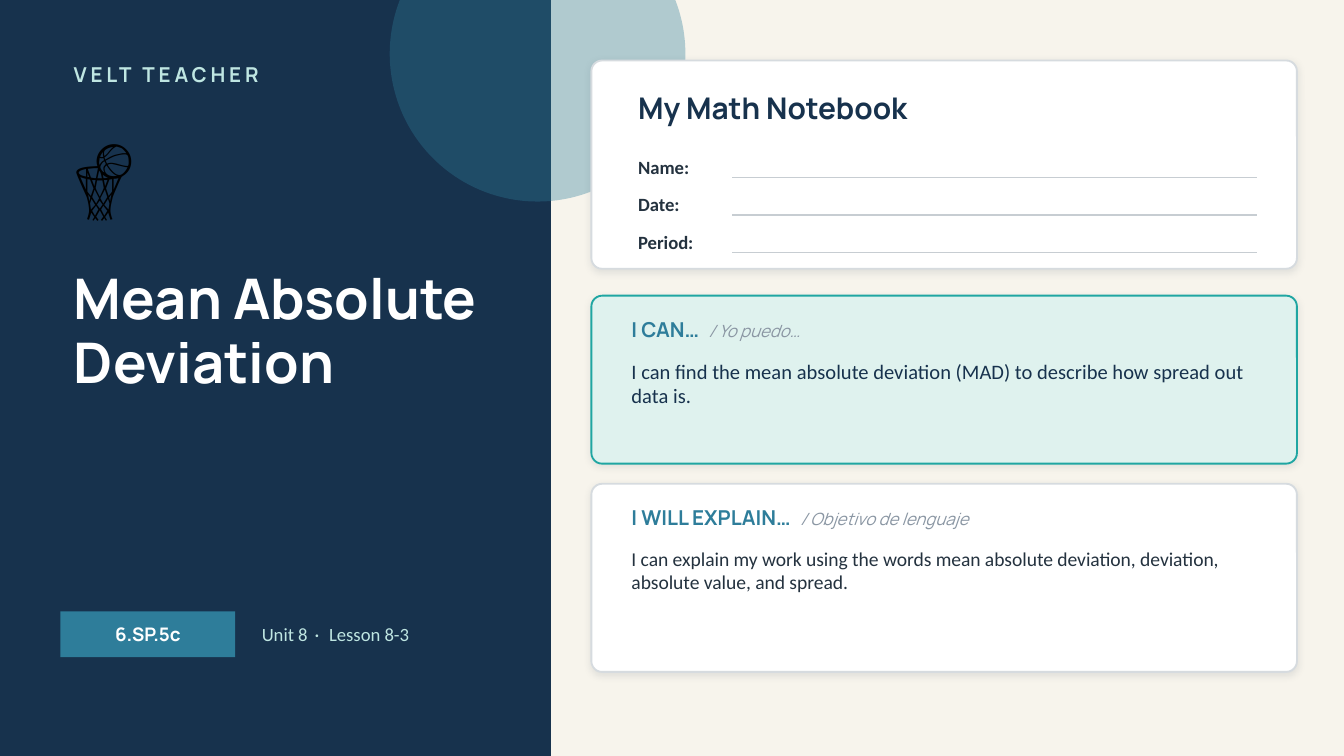
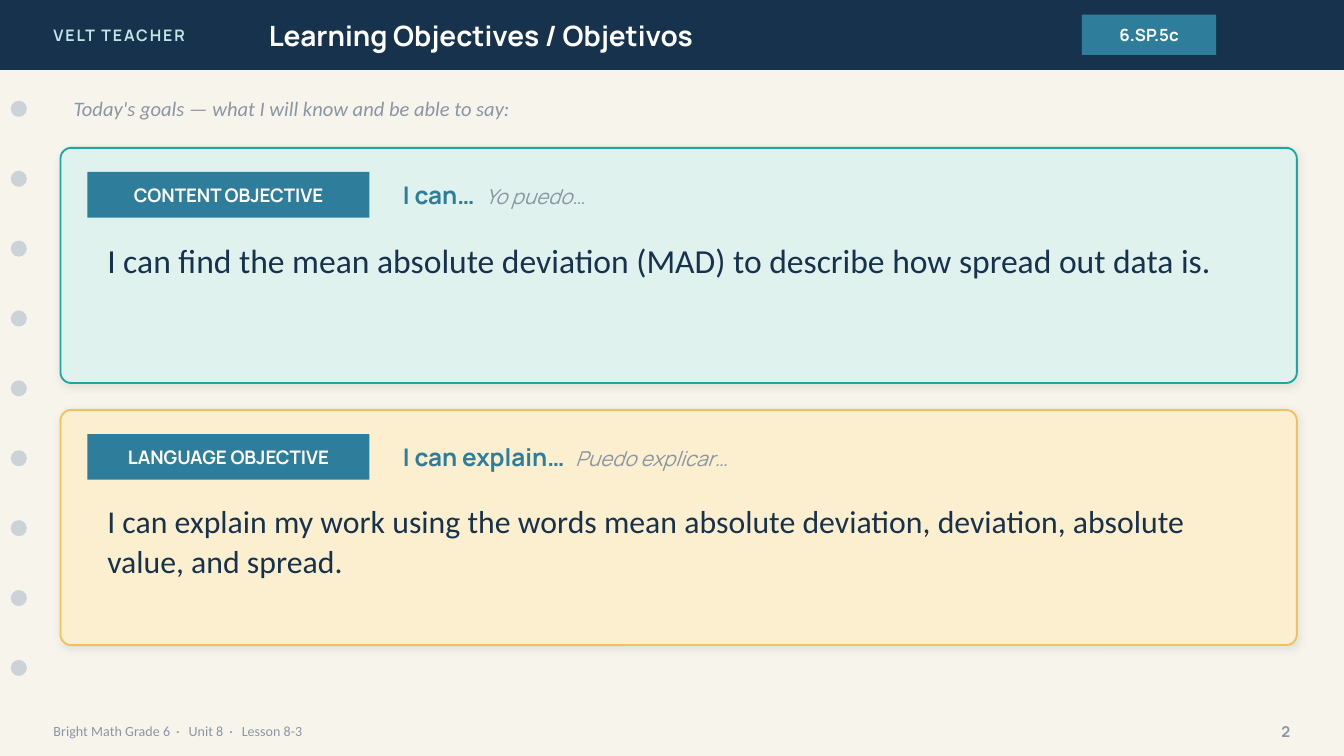
"""Build the cover and objectives slides of a math notebook lesson."""
from lxml.etree import SubElement
from pptx import Presentation
from pptx.dml.color import RGBColor
from pptx.enum.shapes import MSO_CONNECTOR, MSO_SHAPE
from pptx.enum.text import MSO_ANCHOR, MSO_AUTO_SIZE, PP_ALIGN
from pptx.oxml.ns import qn
from pptx.util import Pt

NAVY = RGBColor(0x17, 0x32, 0x4D)
BLUE = RGBColor(0x2E, 0x7D, 0x9A)
TEAL = RGBColor(0x1F, 0xA6, 0xA2)
MINT = RGBColor(0xDF, 0xF2, 0xEE)
AQUA = RGBColor(0xBF, 0xE6, 0xE2)
GOLD = RGBColor(0xF2, 0xC1, 0x5B)
SAND = RGBColor(0xFB, 0xEF, 0xD0)
CREAM = RGBColor(0xF7, 0xF4, 0xEC)
WHITE = RGBColor(0xFF, 0xFF, 0xFF)
BLACK = RGBColor(0x00, 0x00, 0x00)
INK = RGBColor(0x24, 0x32, 0x3F)
GREY = RGBColor(0x8A, 0x96, 0xA3)
RULE = RGBColor(0xC7, 0xCD, 0xD2)
DOT = RGBColor(0xCB, 0xD3, 0xD9)
EDGE = RGBColor(0xD6, 0xDB, 0xDF)

HEADING, BODY = "Manrope", "Calibri"
WIDTH, HEIGHT = 720, 405
RADIUS = 5.76
BRAND = "VELT TEACHER"
STANDARD = "6.SP.5c"
UNIT = ["Unit 8", "Lesson 8-3"]
CAN = ("I can find the mean absolute deviation (MAD) to describe "
       "how spread out data is.")
EXPLAIN = ("I can explain my work using the words mean absolute deviation, "
           "deviation, absolute value, and spread.")


def look(size, color, name=BODY, **extra):
    return {"size": Pt(size), "color": color, "name": name, "bold": False,
            "italic": False, **extra}


def heading(size, color, **extra):
    return look(size, color, HEADING, **{"bold": True, **extra})


def dotted(parts, style):
    """Join the parts with widely set middle dots."""
    spans = [(parts[0], style)]
    for part in parts[1:]:
        spans += [(" · ", {**style, "spacing": 1.5}), (part, style)]
    return spans


class Notebook:
    """Holds the deck style and the slide being drawn."""

    def __init__(self):
        self.deck = Presentation()
        self.deck.slide_width = Pt(WIDTH)
        self.deck.slide_height = Pt(HEIGHT)
        self.page = None

    def add_page(self):
        self.page = self.deck.slides.add_slide(self.deck.slide_layouts[5])
        self.page.background.fill.solid()
        self.page.background.fill.fore_color.rgb = CREAM

    def fill_text(self, box, spans, align=PP_ALIGN.LEFT,
                  anchor=MSO_ANCHOR.MIDDLE, leading=None):
        frame = box.text_frame
        settings = {"word_wrap": True, "auto_size": MSO_AUTO_SIZE.NONE,
                    "vertical_anchor": anchor}
        for key, value in settings.items():
            setattr(frame, key, value)
        para = frame.paragraphs[0]
        para.alignment = align
        if leading:
            para.line_spacing = leading
        for text, style in spans:
            span = para.add_run()
            span.text = text
            for key, value in style.items():
                if key == "color":
                    span.font.color.rgb = value
                elif key == "spacing":
                    span.font._element.set("spc", str(int(value * 100)))
                else:
                    setattr(span.font, key, value)

    def text(self, area, spans, **layout):
        box = self.page.shapes.add_textbox(*map(Pt, area))
        self.fill_text(box, spans, **layout)

    def title(self, area, text, style, **layout):
        box = self.page.shapes.title
        box.element.getparent().append(box.element)
        for key, value in zip(("left", "top", "width", "height"), area):
            setattr(box, key, Pt(value))
        self.fill_text(box, [(text, style)], **layout)

    def shape(self, kind, area, fill, edge=None, opacity=None):
        shape = self.page.shapes.add_shape(kind, *map(Pt, area))
        shape.shadow.inherit = False
        shape.fill.solid()
        shape.fill.fore_color.rgb = fill
        if edge is None:
            shape.line.fill.background()
        else:
            shape.line.color.rgb = edge
            shape.line.width = Pt(1)
        if opacity:
            color = shape.element.spPr.find(qn("a:solidFill"))[0]
            SubElement(color, qn("a:alpha"), val=str(opacity * 1000))
        return shape

    def card(self, area, fill, edge):
        card = self.shape(MSO_SHAPE.ROUNDED_RECTANGLE, area, fill, edge)
        card.adjustments[0] = RADIUS / min(area[2:])
        effects = card.element.spPr.find(qn("a:effectLst"))
        shadow = SubElement(effects, qn("a:outerShdw"), blurRad=str(Pt(4)),
                            dist=str(Pt(1)), dir="5400000", algn="bl",
                            rotWithShape="0")
        color = SubElement(shadow, qn("a:srgbClr"), val="1C2E42")
        SubElement(color, qn("a:alpha"), val="10000")

    def badge(self, area, text, size=10):
        badge = self.shape(MSO_SHAPE.RECTANGLE, area, BLUE)
        self.fill_text(badge, [(text, heading(size, WHITE))],
                       align=PP_ALIGN.CENTER)

    def bilingual(self, area, english, spanish, size):
        style = heading(size, BLUE)
        self.text(area, [
            (english, style), (" ", {**style, "spacing": size / 4}),
            (spanish, look(size - 2, GREY, HEADING, **{"italic": True}))])

    def rule(self, left, right, top):
        line = self.page.shapes.add_connector(
            MSO_CONNECTOR.STRAIGHT, Pt(left), Pt(top), Pt(right), Pt(top))
        line.line.color.rgb = RULE
        line.line.width = Pt(0.75)
        SubElement(line.element.spPr, qn("a:effectLst"))


def build_cover(book):
    book.add_page()
    book.shape(MSO_SHAPE.RECTANGLE, (0, 0, 295.2, HEIGHT), NAVY)
    book.shape(MSO_SHAPE.OVAL, (208.8, -50.4, 158.4, 158.4), BLUE, opacity=35)
    book.text((32.4, 28.8, 237.6, 21.6),
              [(BRAND, heading(11, AQUA, spacing=2))])
    book.text((32.4, 61.2, 108, 64.8), [("🏀", look(44, BLACK))])
    book.title((32.4, 140.4, 237.6, 122.4), "Mean Absolute Deviation",
               heading(30, WHITE), anchor=MSO_ANCHOR.TOP, leading=0.95)
    book.badge((32.4, 327.6, 93.6, 24.48), STANDARD)
    book.text((133.2, 327.6, 151.2, 24.48), dotted(UNIT, look(10, AQUA)))

    book.card((316.8, 32.4, 378, 111.6), WHITE, EDGE)
    book.text((334.8, 43.2, 345.6, 28.8),
              [("My Math Notebook", heading(16, NAVY))])
    for row, field in enumerate(("Name:", "Date:", "Period:")):
        top = 80.64 + 20.16 * row
        book.text((334.8, top, 57.6, 17.28),
                  [(field, look(10, INK, bold=True))])
        book.rule(392.4, 673.2, top + 14.4)

    goals = (
        (158.4, 90, MINT, TEAL, "I CAN…", "/ Yo puedo…", CAN, look(11, NAVY)),
        (259.2, 100.8, WHITE, EDGE, "I WILL EXPLAIN…",
         "/ Objetivo de lenguaje", EXPLAIN, look(10.5, INK)),
    )
    for top, height, fill, edge, english, spanish, goal, style in goals:
        book.card((316.8, top, 378, height), fill, edge)
        book.bilingual((331.2, top + 7.2, 349.2, 21.6), english, spanish, 11)
        book.text((331.2, top + 30.24, 349.2, height - 34), [(goal, style)],
                  anchor=MSO_ANCHOR.TOP)


def build_objectives(book):
    book.add_page()
    band = 37.44
    book.shape(MSO_SHAPE.RECTANGLE, (0, 0, WIDTH, band), NAVY)
    book.text((21.6, 0, 172.8, band),
              [(BRAND, heading(8.5, AQUA, spacing=1))])
    book.title((136.8, 0, 403.2, band), "Learning Objectives / Objetivos",
               heading(15, WHITE))
    book.badge((579.6, 7.92, 72, 21.6), STANDARD, 9)
    for hole in range(9):
        book.shape(MSO_SHAPE.OVAL, (5.76, 54 + 37.44 * hole, 8.64, 8.64), DOT)
    book.text((21.6, 381.6, 504, 20.16),
              dotted(["Bright Math Grade 6", *UNIT], look(7.5, GREY)))
    book.text((662.4, 381.6, 36, 20.16), [("2", heading(8, GREY))],
              align=PP_ALIGN.RIGHT)
    book.text((32.4, 47.52, 662.4, 21.6),
              [("Today's goals — what I will know and be able to say:",
                look(11, GREY, **{"italic": True}))])

    objectives = (
        (MINT, TEAL, "CONTENT OBJECTIVE", "I can…", "Yo puedo…", CAN, 18),
        (SAND, GOLD, "LANGUAGE OBJECTIVE", "I can explain…",
         "Puedo explicar…", EXPLAIN, 17),
    )
    for row, objective in enumerate(objectives):
        fill, edge, kind, english, spanish, goal, size = objective
        top = 79.2 + 140.4 * row
        book.card((32.4, top, 662.4, 126), fill, edge)
        book.badge((46.8, top + 12.96, 151.2, 24.48), kind)
        book.bilingual((208.8, top + 12.96, 475.2, 24.48),
                       english, spanish, 13)
        book.text((50.4, top + 44.64, 626.4, 72), [(goal, look(size, NAVY))],
                  anchor=MSO_ANCHOR.TOP, leading=1.05)


def main():
    book = Notebook()
    build_cover(book)
    build_objectives(book)
    book.deck.save("out.pptx")


if __name__ == "__main__":
    main()
